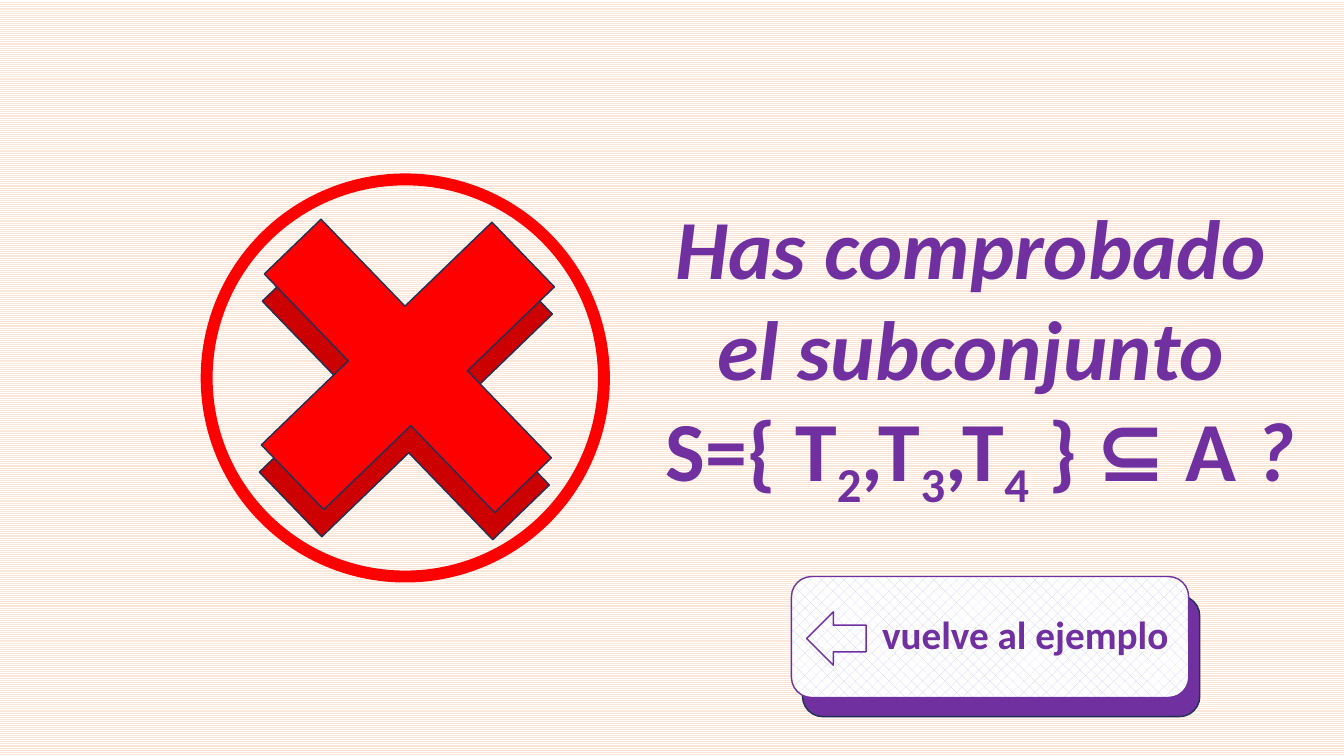
from lxml.etree import SubElement
from pptx import Presentation
from pptx.dml.color import RGBColor
from pptx.enum.dml import MSO_PATTERN as Pattern
from pptx.enum.shapes import MSO_SHAPE as Shape
from pptx.enum.text import MSO_ANCHOR, MSO_AUTO_SIZE, PP_ALIGN
from pptx.oxml.ns import qn
from pptx.util import Inches, Pt

PURPLE, RED, DARK_RED, NAVY = "7030A0", "FF0000", "CC0000", "1E3256"
PEACH, LILAC, WHITE = "FBE5D6", "CCCCFF", "FFFFFF"
FONT = "Calibri"
QUESTION = [
    [("Has comprobado ", "slanted")],
    [("el subconjunto ", "slanted")],
    [("S={ T", "plain"), ("2", "sub"), (",T", "plain"), ("3", "sub"),
     (",T", "plain"), ("4", "sub"), (" } ⊆ A ", "plain"), ("?", "slanted")],
]
QUESTION_BOX = (6.46, 1.89, 6.52, 3.13)
RING_BOX = (2.05, 1.78, 3.94, 3.94)
CROSS_SIZE = (3.29, 3.18)
CROSSES = [((2.38, 2.31), DARK_RED), ((2.4, 2.04), RED)]
BUTTON_SIZE = (3.94, 1.2)
BUTTON_AT, BUTTON_SHADE_AT = (7.85, 5.72), (7.96, 5.91)
BUTTON_LABEL = "vuelve al ejemplo"
ARROW_BOX = (8, 6.07, 0.59, 0.53)


def color(value):
    return RGBColor.from_string(value)


def set_pattern(fill, pattern, front, back):
    fill.patterned()
    fill.pattern = pattern
    fill.fore_color.rgb = color(front)
    fill.back_color.rgb = color(back)


def add_figure(kind, box, fill, line, width=1):
    figure = page.shapes.add_shape(kind, *map(Inches, box))
    figure.shadow.inherit = False
    if fill:
        figure.fill.solid()
        figure.fill.fore_color.rgb = color(fill)
    else:
        figure.fill.background()
    figure.line.color.rgb = color(line)
    figure.line.width = Pt(width)
    return figure


def add_span(para, text, size, style="plain"):
    span = para.add_run()
    span.text = text
    font = span.font
    font.name, font.size, font.bold = FONT, Pt(size), True
    font.italic = style == "slanted"
    font.color.rgb = color(PURPLE)
    props = font._element
    if style == "sub":
        props.set("baseline", "-25000")
    if style == "slanted":
        outline = SubElement(props, qn("a:ln"), w=str(Pt(1)))
        paint = SubElement(outline, qn("a:solidFill"))
        SubElement(paint, qn("a:srgbClr"), val=PURPLE)
        props.insert(0, outline)


deck = Presentation()
deck.slide_width, deck.slide_height = Inches(13.33), Inches(7.5)
page = deck.slides.add_slide(deck.slide_layouts[5])
set_pattern(page.background.fill, Pattern.LIGHT_HORIZONTAL, PEACH, WHITE)

title = page.shapes.title
title.left, title.top, title.width, title.height = map(Inches, QUESTION_BOX)
frame = title.text_frame
frame.word_wrap = False
frame.auto_size = MSO_AUTO_SIZE.SHAPE_TO_FIT_TEXT
frame.vertical_anchor = MSO_ANCHOR.TOP
for index, line in enumerate(QUESTION):
    para = frame.add_paragraph() if index else frame.paragraphs[0]
    para.alignment = PP_ALIGN.CENTER
    for text, style in line:
        add_span(para, text, 60, style)

add_figure(Shape.FLOWCHART_CONNECTOR, RING_BOX, None, RED, 8.5)
for corner, fill in CROSSES:
    cross = add_figure(Shape.CROSS, corner + CROSS_SIZE, fill, NAVY)
    cross.adjustments[0] = 0.377
    cross.rotation = 46

add_figure(Shape.ROUNDED_RECTANGLE, BUTTON_SHADE_AT + BUTTON_SIZE, PURPLE, NAVY)
button = add_figure(Shape.ROUNDED_RECTANGLE, BUTTON_AT + BUTTON_SIZE, WHITE, PURPLE)
set_pattern(button.fill, Pattern.PERCENT_25, LILAC, WHITE)
frame = button.text_frame
frame.word_wrap = True
frame.vertical_anchor = MSO_ANCHOR.MIDDLE
frame.margin_left, frame.margin_right = Inches(0.84), Inches(0)
para = frame.paragraphs[0]
para.alignment = PP_ALIGN.LEFT
para.line_spacing = 0.9
para.space_before = Pt(10)
add_span(para, BUTTON_LABEL, 28)
add_figure(Shape.LEFT_ARROW, ARROW_BOX, None, PURPLE)

deck.save("out.pptx")
